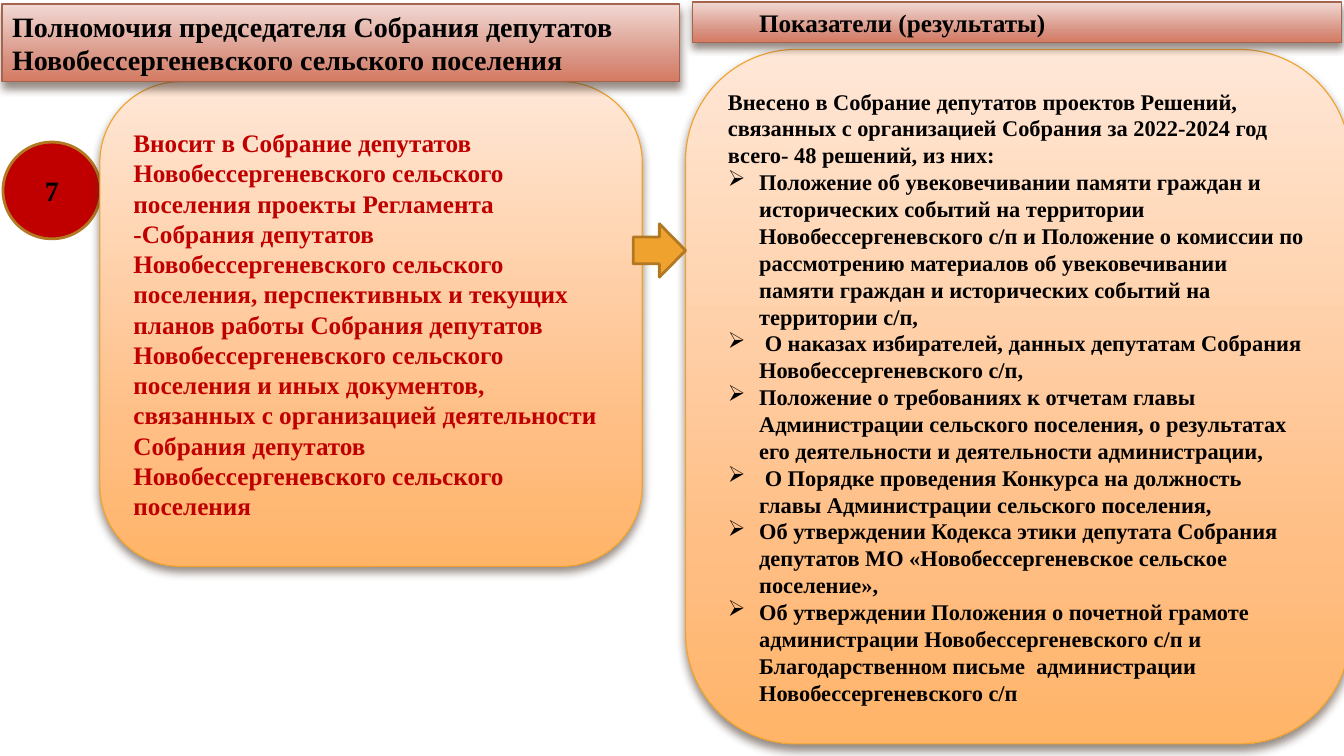
from dataclasses import dataclass

from lxml.etree import SubElement
from pptx import Presentation
from pptx.dml.color import RGBColor
from pptx.enum.shapes import MSO_SHAPE
from pptx.enum.text import MSO_ANCHOR, MSO_AUTO_SIZE, PP_ALIGN
from pptx.oxml import parse_xml
from pptx.oxml.ns import nsdecls, qn
from pptx.util import Inches, Pt


@dataclass(frozen=True)
class Theme:
    font: str = "Times New Roman"
    black: str = "000000"
    red: str = "C00000"
    amber: str = "F0A22E"
    amber_dark: str = "B27822"
    brick: str = "A5644E"
    shadow: str = "4E3B30"
    peach_stops: tuple = ((0, "FFE7D7"), (72, "FFBE84"), (100, "FFB468"))
    brick_stops: tuple = ((0, "F1D9D4"), (72, "D89180"), (100, "D47A62"))
    large: int = 20
    medium: int = 18
    small: int = 16
    thin: float = 0.79
    thick: float = 2


class SlideBuilder:
    def __init__(self, slide, theme):
        self.slide = slide
        self.theme = theme

    def add_shape(self, kind, box):
        shape = self.slide.shapes.add_shape(kind, *map(Inches, box))
        shape.shadow.inherit = False
        return shape

    def outline(self, shape, color, width):
        shape.line.color.rgb = RGBColor.from_string(color)
        shape.line.width = Pt(width)

    def flat(self, shape, color):
        """Solid fill with a thick outline."""
        shape.fill.solid()
        shape.fill.fore_color.rgb = RGBColor.from_string(color)
        self.outline(shape, self.theme.amber_dark, self.theme.thick)

    def raised(self, shape, stops, line_color):
        """Vertical gradient, thin outline and a soft shadow below."""
        shape.fill.gradient()
        shape.fill.gradient_angle = 270
        properties = shape._element.spPr
        stop_list = properties.find(f".//{qn('a:gsLst')}")
        for stop in list(stop_list):
            stop_list.remove(stop)
        for position, color in stops:
            stop = SubElement(stop_list, qn("a:gs"), pos=str(position * 1000))
            SubElement(stop, qn("a:srgbClr"), val=color)
        self.outline(shape, line_color, self.theme.thin)
        shape.shadow.inherit = False
        properties.find(qn("a:effectLst")).append(parse_xml(
            f'<a:outerShdw {nsdecls("a")} blurRad="{Pt(6)}" dist="{Pt(4)}" '
            f'dir="5400000" rotWithShape="0"><a:srgbClr val="{self.theme.shadow}">'
            '<a:alpha val="60000"/></a:srgbClr></a:outerShdw>'))

    def set_text(self, shape, lines, size, color, anchor=MSO_ANCHOR.MIDDLE,
                 align=PP_ALIGN.LEFT):
        frame = shape.text_frame
        frame.word_wrap = True
        frame.auto_size = MSO_AUTO_SIZE.NONE
        frame.vertical_anchor = anchor
        frame.text = "\n".join(lines)
        for paragraph in frame.paragraphs:
            paragraph.alignment = align
            paragraph.font.name = self.theme.font
            paragraph.font.size = Pt(size)
            paragraph.font.bold = True
            paragraph.font.color.rgb = RGBColor.from_string(color)
        return frame.paragraphs

    def indent(self, paragraph, left, first=0.0, bullet=None):
        properties = paragraph._p.get_or_add_pPr()
        properties.set("marL", str(Inches(left)))
        properties.set("indent", str(Inches(first)))
        if bullet:
            mark = parse_xml(f'<a:buChar {nsdecls("a")} char="{bullet}"/>')
            properties.insert_element_before(mark, "a:tabLst", "a:defRPr")

    def header(self, shape, text, size):
        self.raised(shape, self.theme.brick_stops, self.theme.brick)
        return self.set_text(shape, [text], size, self.theme.black, MSO_ANCHOR.TOP)

    def title(self, box, text):
        title = self.slide.shapes.title
        title.left, title.top, title.width, title.height = map(Inches, box)
        self.header(title, text, self.theme.large)
        self.slide.shapes._spTree.append(title._element)  # in front of the panels

    def column_header(self, box, text, left):
        header = self.add_shape(MSO_SHAPE.RECTANGLE, box)
        paragraphs = self.header(header, text, self.theme.medium)
        self.indent(paragraphs[0], left)

    def panel(self, box, lines, size, color):
        panel = self.add_shape(MSO_SHAPE.ROUNDED_RECTANGLE, box)
        self.raised(panel, self.theme.peach_stops, self.theme.amber)
        return self.set_text(panel, lines, size, color)

    def number_badge(self, box, number):
        badge = self.add_shape(MSO_SHAPE.OVAL, box)
        self.flat(badge, self.theme.red)
        self.set_text(badge, [number], self.theme.large, self.theme.black,
                      align=PP_ALIGN.CENTER)

    def arrow(self, box):
        arrow = self.add_shape(MSO_SHAPE.RIGHT_ARROW, box)
        self.flat(arrow, self.theme.amber)


POWER = (
    "Вносит в Собрание депутатов Новобессергеневского сельского поселения "
    "проекты Регламента -Собрания депутатов Новобессергеневского сельского "
    "поселения, перспективных и текущих планов работы Собрания депутатов "
    "Новобессергеневского сельского поселения и иных документов, связанных с "
    "организацией деятельности Собрания депутатов Новобессергеневского "
    "сельского поселения")
RESULTS_INTRO = (
    "Внесено в Собрание депутатов проектов Решений, связанных с организацией "
    "Собрания за 2022-2024 год всего- 48 решений, из них:")
DECISIONS = [
    "Положение об увековечивании памяти граждан и исторических событий на "
    "территории Новобессергеневского с/п и Положение о комиссии по "
    "рассмотрению материалов об увековечивании памяти граждан и исторических "
    "событий на территории с/п,",
    " О наказах избирателей, данных депутатам Собрания Новобессергеневского с/п,",
    "Положение о требованиях к отчетам главы Администрации сельского "
    "поселения, о результатах его деятельности и деятельности администрации,",
    " О Порядке проведения Конкурса на должность главы Администрации "
    "сельского поселения,",
    "Об утверждении Кодекса этики депутата Собрания депутатов МО "
    "«Новобессергеневское сельское поселение»,",
    "Об утверждении Положения о почетной грамоте администрации "
    "Новобессергеневского с/п и Благодарственном письме  администрации "
    "Новобессергеневского с/п",
]


def main():
    presentation = Presentation()
    presentation.slide_width = Inches(13.33)
    presentation.slide_height = Inches(7.5)
    theme = Theme()
    title_only = presentation.slide_layouts[5]
    builder = SlideBuilder(presentation.slides.add_slide(title_only), theme)

    # Power of the chairman
    builder.number_badge((0.03, 1.41, 0.97, 0.96), "7")
    builder.panel((0.99, 0.81, 5.38, 4.81), [POWER], theme.medium, theme.red)

    # Results: introduction and bulleted decisions
    results = builder.panel((6.8, 0.49, 6.59, 6.89), [RESULTS_INTRO, *DECISIONS],
                            theme.small, theme.black)
    for decision in results[1:]:
        builder.indent(decision, 0.31, -0.31, "➢")

    # Headers
    builder.title((0.02, 0.04, 6.72, 0.77),
                  "Полномочия председателя Собрания депутатов "
                  "Новобессергеневского сельского поселения")
    builder.column_header((6.87, 0.02, 6.44, 0.4), "Показатели (результаты)", 0.56)

    # Link from power to results
    builder.arrow((6.28, 2.22, 0.52, 0.53))

    presentation.save("out.pptx")


if __name__ == "__main__":
    main()
